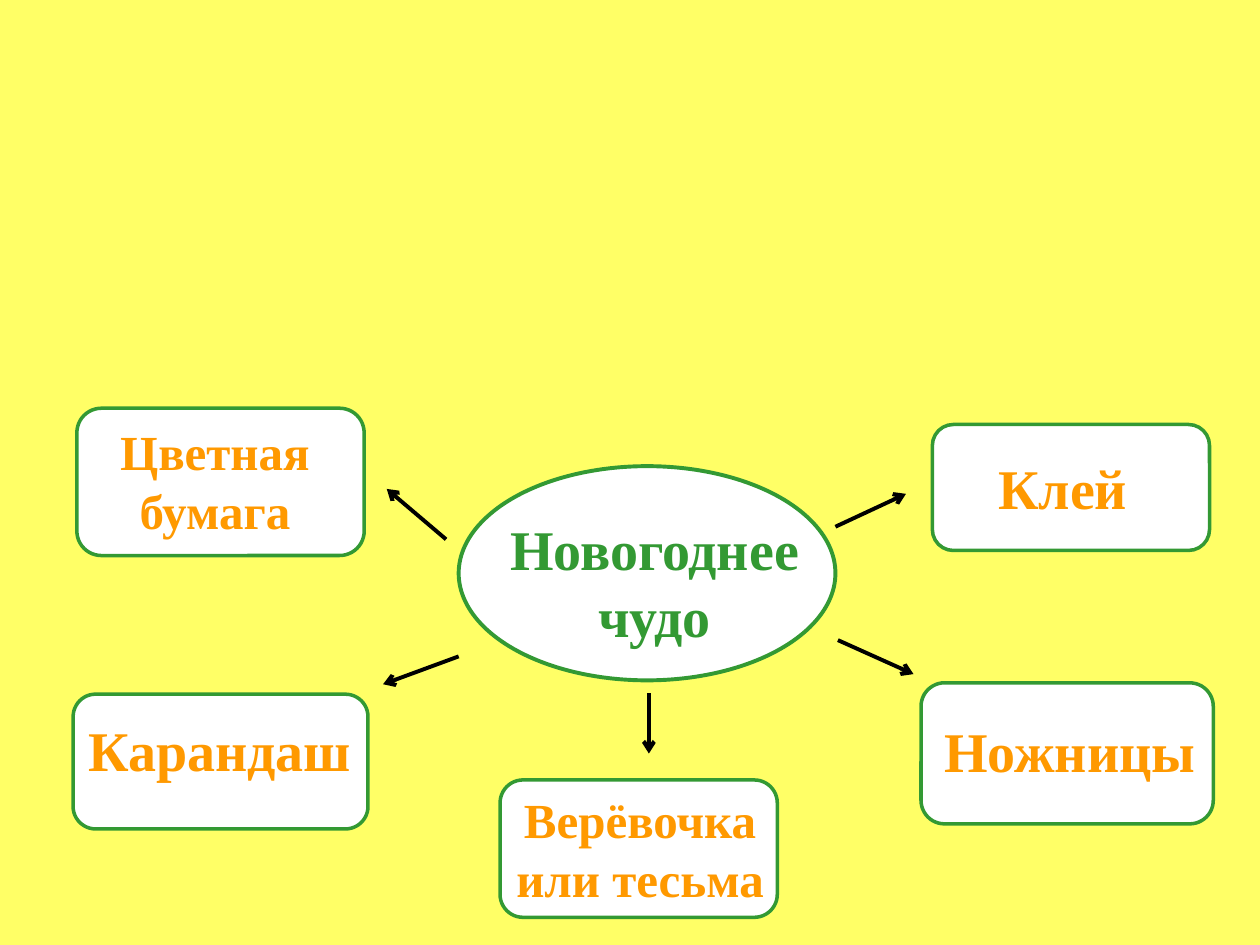
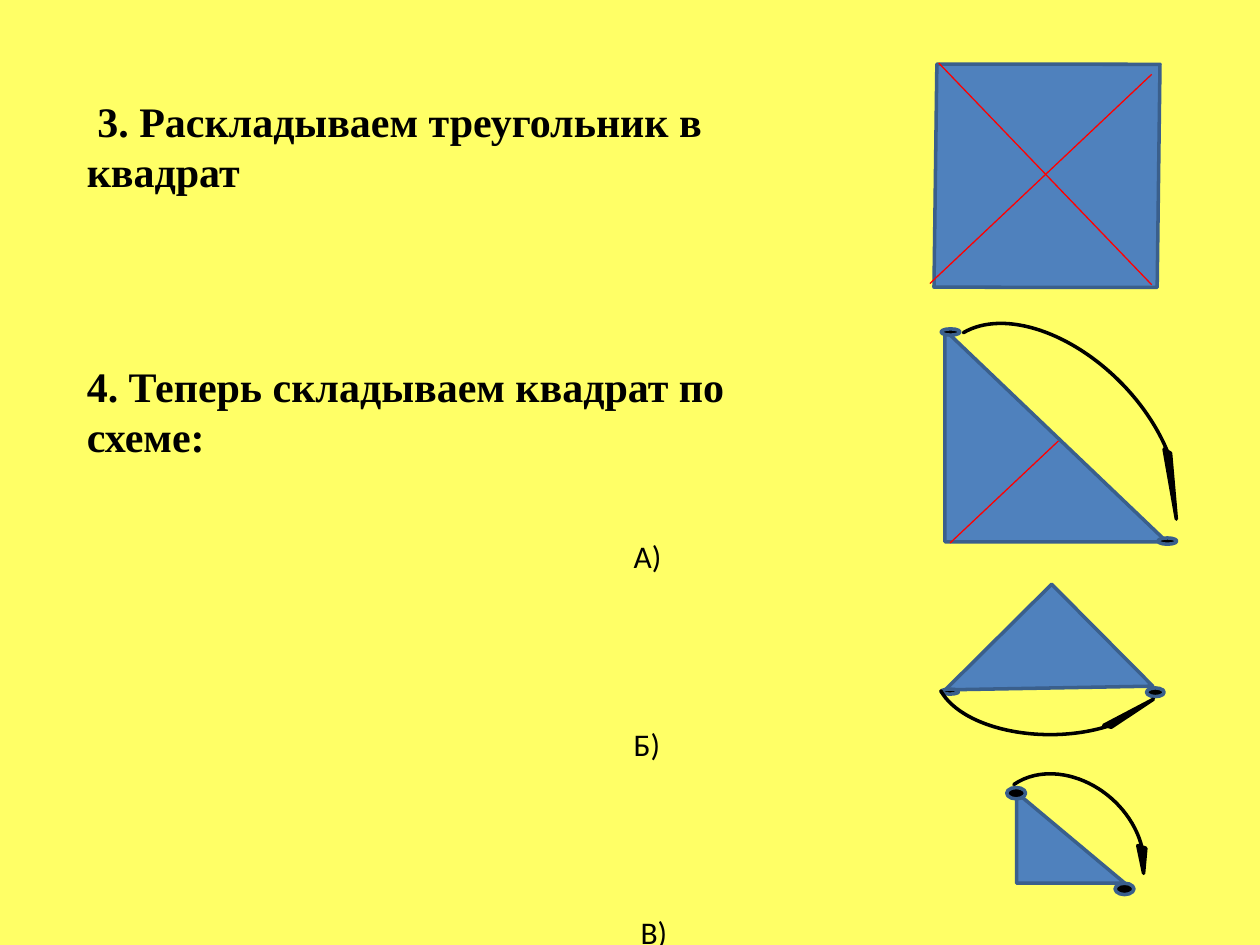
from pptx import Presentation
from pptx.dml.color import RGBColor
from pptx.enum.shapes import MSO_CONNECTOR as Link, MSO_SHAPE as Kind
from pptx.enum.text import PP_ALIGN as Align
from pptx.oxml.ns import qn
from pptx.util import Pt
from lxml.etree import SubElement as Sub

YELLOW = RGBColor(0xFF, 0xFF, 0x66)
WHITE = RGBColor(0xFF, 0xFF, 0xFF)
BLACK = RGBColor(0, 0, 0)
GREEN = RGBColor(0x33, 0x99, 0x33)
ORANGE = RGBColor(0xFF, 0x99, 0x00)
BLUE = RGBColor(0x4F, 0x81, 0xBD)
NAVY = RGBColor(0x3A, 0x5F, 0x8C)
RED = RGBColor(0xFF, 0, 0)
SERIF = "Times New Roman"
SANS = "Calibri"


def new_slide(deck):
    slide = deck.slides.add_slide(deck.slide_layouts[6])
    slide.background.fill.solid()
    slide.background.fill.fore_color.rgb = YELLOW
    return slide


def add_form(slide, kind, box, fill, edge, width=2, turn=0, flip="", tune=()):
    form = slide.shapes.add_shape(kind, *map(Pt, box))
    form.shadow.inherit = False
    form.fill.solid()
    form.fill.fore_color.rgb = fill
    form.line.color.rgb = edge
    form.line.width = Pt(width)
    form.rotation = turn
    for axis in flip:
        form._element.spPr.get_or_add_xfrm().set("flip" + axis, "1")
    for index, value in enumerate(tune):
        form.adjustments[index] = value


def add_line(slide, ends, color, width, head=False):
    line = slide.shapes.add_connector(Link.STRAIGHT, *map(Pt, ends))
    line.line.color.rgb = color
    line.line.width = Pt(width)
    if head:
        Sub(line.line._get_or_add_ln(), qn("a:tailEnd"), type="arrow")
    Sub(line._element.spPr, qn("a:effectLst"))


def add_box(slide, box, wrap=True):
    frame = slide.shapes.add_textbox(*map(Pt, box)).text_frame
    frame.word_wrap = wrap
    return frame


def add_text(frame, text, size=18, font=SERIF, color=BLACK, bold=True,
             align=Align.LEFT, before=0, left=0, first=0):
    para = frame.paragraphs[0]
    if para.runs:
        para = frame.add_paragraph()
    para.alignment = align
    if before:
        para.space_before = Pt(before)
    props = para._p.get_or_add_pPr()
    props.set("marL", str(Pt(left)))
    props.set("indent", str(Pt(first)))
    run = para.add_run()
    run.text = text
    run.font.name = font
    run.font.size = Pt(size)
    run.font.bold = bold
    run.font.color.rgb = color


def add_label(slide, text, box, size, color, wrap=True):
    add_text(add_box(slide, box, wrap), text, size=size, color=color,
             align=Align.CENTER)


def add_card(slide, text, size, card, box, wrap=True):
    add_form(slide, Kind.ROUNDED_RECTANGLE, card, WHITE, GREEN)
    add_label(slide, text, box, size, ORANGE, wrap)


def add_dot(slide, box):
    add_form(slide, Kind.OVAL, box, BLACK, NAVY, flip="H")


def add_arc(slide, box, turn, flip, sweep, start, head):
    add_form(slide, Kind.CIRCULAR_ARROW, box, BLACK, BLACK, turn=turn,
             flip=flip, tune=(0, sweep, 190.48, start, head))


def add_fold(slide, box, turn=0, kind=Kind.RIGHT_TRIANGLE):
    add_form(slide, kind, box, BLUE, NAVY, turn=turn)


def add_crease(slide, *ends):
    add_line(slide, ends, RED, 0.75)


def tool_map(deck):
    slide = new_slide(deck)
    add_form(slide, Kind.OVAL, (262.1, 266.4, 215.3, 122.4), WHITE, GREEN, 2.25)
    add_label(slide, "Новогоднее чудо", (257.8, 290.2, 232.6, 85), 32, GREEN)
    for ends in ((254.9, 308.2, 221, 279.4), (370.8, 396, 370.8, 430.6),
                 (477.4, 301, 517.7, 282.2), (262.1, 375.1, 218.9, 391),
                 (478.8, 365.8, 522, 385.2)):
        add_line(slide, ends, BLACK, 2.25, head=True)
    add_card(slide, "Цветная бумага", 28,
             (43.9, 233.3, 164.2, 84.2), (34.6, 237.6, 176.4, 74.9))
    add_card(slide, "Клей", 32,
             (532.8, 242.6, 158.4, 72), (555.8, 255.6, 103, 46.1))
    add_card(slide, "Верёвочка или тесьма", 28,
             (285.8, 445.7, 158.4, 78.5), (281.5, 447.8, 168.5, 74.9))
    add_card(slide, "Карандаш", 32,
             (41.8, 396.7, 168.5, 77), (31, 405.4, 189.4, 46.1))
    add_card(slide, "Ножницы", 32,
             (526.3, 390.2, 167, 80.6), (531.4, 406.1, 159.8, 46.1), wrap=False)


def fold_steps(deck):
    slide = new_slide(deck)
    frame = add_box(slide, (42.5, 51, 383, 494))
    add_text(frame, "3. Раскладываем треугольник в квадрат", size=24, first=6)
    add_text(frame, "4.\u00a0Теперь складываем квадрат по схеме:", size=24,
             before=93.8)
    for mark, before, left in (("А)", 43.2, 312.5), ("Б)", 86, 312.5),
                               ("В)", 86, 316.5)):
        add_text(frame, mark, font=SANS, bold=False, before=before, left=left)

    add_fold(slide, (580.9, 452.9, 61.9, 51.8))
    add_fold(slide, (556.6, 352.1, 85.7, 82.1), 135.2)
    add_dot(slide, (537.8, 393.8, 10.1, 2.9))
    add_dot(slide, (655.2, 393.1, 10.1, 5))
    add_arc(slide, (532.8, 347.8, 134.6, 74.2), 180, "H", 17.16, 113.44, 0.03)
    add_arc(slide, (559.4, 444.2, 100.8, 81.4), 221.2, "HV", 11.54, 113.44, 0.03)
    add_dot(slide, (637.2, 504.7, 10.8, 6.5))
    add_dot(slide, (575.3, 450, 10.8, 6.5))

    add_arc(slide, (517, 200.9, 172.8, 108), 225.2, "HV", 17.16, 111.39, 0.02)
    add_fold(slide, (540, 188.6, 126.7, 121))
    add_crease(slide, 542.9, 310.3, 604.8, 252)
    add_dot(slide, (661.7, 307.4, 10.8, 3.6))
    add_dot(slide, (537.8, 187.9, 10.8, 3.6))

    add_fold(slide, (507.6, 10.8, 181.4, 179.3), 315.4, Kind.DIAMOND)
    add_crease(slide, 658.1, 162.7, 536.4, 36)
    add_crease(slide, 531.4, 162, 658.1, 42.5)


def main():
    deck = Presentation()
    deck.slide_width, deck.slide_height = Pt(720), Pt(540)
    tool_map(deck)
    fold_steps(deck)
    deck.save("out.pptx")


if __name__ == "__main__":
    main()
